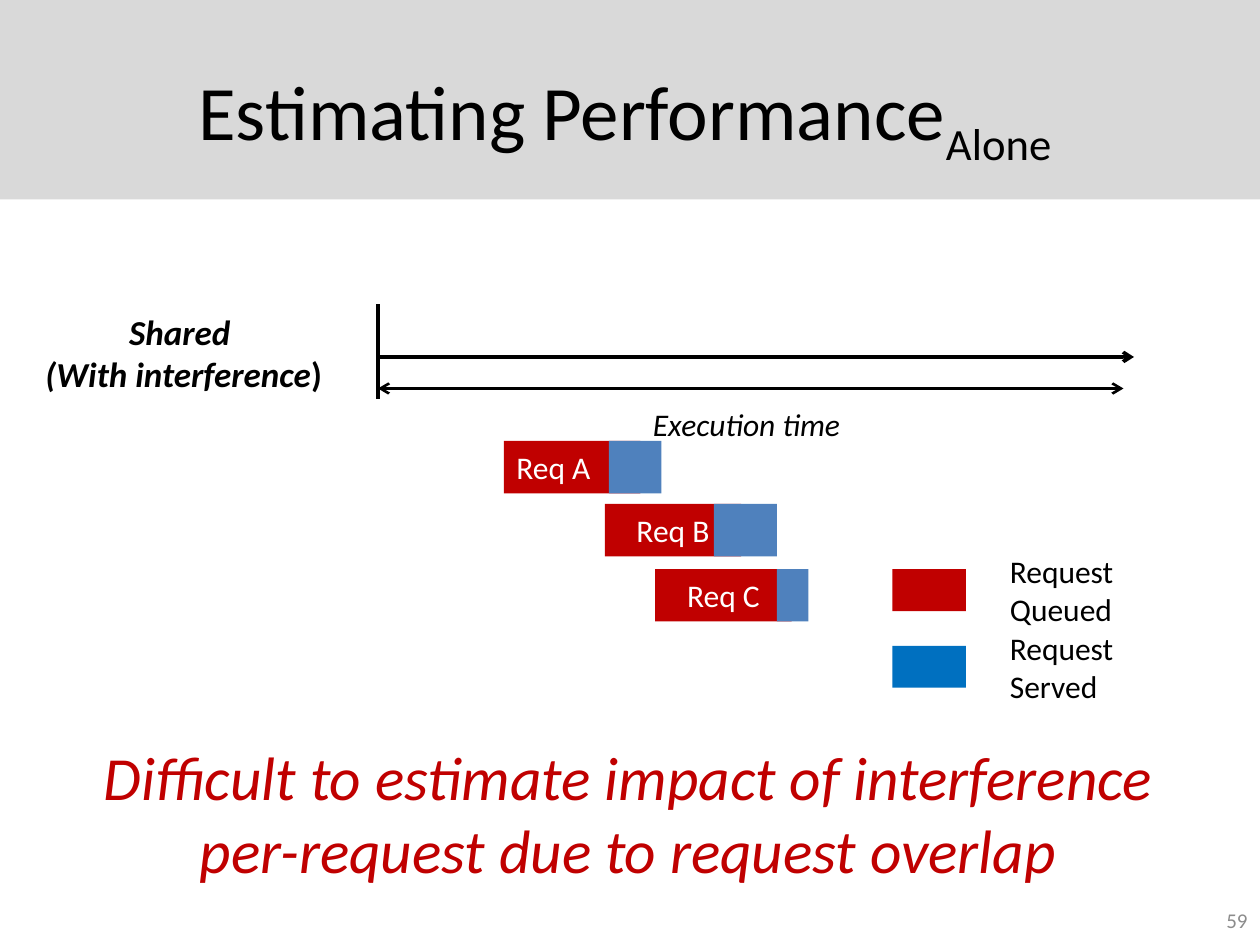
from dataclasses import dataclass

from lxml import etree
from pptx import Presentation
from pptx import util as u
from pptx.dml.color import RGBColor
from pptx.enum import shapes, text
from pptx.oxml import ns

PX = u.Inches(1) // 120
FONT = "Calibri"
COLORS = {
    "banner": "D9D9D9",
    "black": "000000",
    "white": "FFFFFF",
    "number": "8C8C8C",
    "queued": "C00000",
    "served": "4F81BD",
    "served_key": "0070C0",
}
LEFT, CENTER, RIGHT = text.PP_ALIGN.LEFT, text.PP_ALIGN.CENTER, text.PP_ALIGN.RIGHT
TOP, MIDDLE = text.MSO_ANCHOR.TOP, text.MSO_ANCHOR.MIDDLE


@dataclass(frozen=True)
class Box:
    x: int
    y: int
    w: int
    h: int

    def emu(self) -> list[int]:
        return [v * PX for v in (self.x, self.y, self.w, self.h)]


@dataclass(frozen=True)
class Style:
    size: int
    color: str = "black"
    align: int = LEFT
    anchor: int = TOP
    bold: bool = False
    italic: bool = False


@dataclass(frozen=True)
class Request:
    label: str
    queued: Box
    served: Box
    align: int = CENTER


@dataclass(frozen=True)
class Key:
    label: str
    color: str
    y: int


@dataclass(frozen=True)
class Line:
    x1: int
    y1: int
    x2: int
    y2: int
    width: float
    ends: tuple[str, ...] = ()


REQUESTS = [
    Request("Req A", Box(480, 420, 130, 50), Box(580, 420, 50, 50), LEFT),
    Request("Req B", Box(576, 480, 130, 50), Box(680, 480, 60, 50)),
    Request("Req C", Box(624, 542, 130, 50), Box(740, 542, 30, 50)),
]
KEYS = [
    Key("Request Queued", "queued", 542),
    Key("Request Served", "served_key", 615),
]
LINES = [
    Line(360, 290, 360, 380, 2),
    Line(360, 340, 1080, 340, 2, ("tailEnd",)),
    Line(360, 370, 1070, 370, 1.5, ("headEnd", "tailEnd")),
]


def rgb(name: str) -> RGBColor:
    return RGBColor.from_string(COLORS[name])


def format_text(tf, style: Style) -> None:
    tf.word_wrap = True
    tf.vertical_anchor = style.anchor
    for p in tf.paragraphs:
        p.alignment = style.align
        for r in p.runs:
            r.font.name = FONT
            r.font.size = u.Pt(style.size)
            r.font.bold = style.bold
            r.font.italic = style.italic
            r.font.color.rgb = rgb(style.color)


def add_rect(s, box: Box, color: str):
    sp = s.shapes.add_shape(shapes.MSO_SHAPE.RECTANGLE, *box.emu())
    sp.shadow.inherit = False
    sp.fill.solid()
    sp.fill.fore_color.rgb = rgb(color)
    sp.line.fill.background()
    return sp


def add_label(s, box: Box, words: str, style: Style):
    sp = s.shapes.add_textbox(*box.emu())
    sp.text_frame.text = words
    format_text(sp.text_frame, style)
    return sp


def add_line(s, line: Line) -> None:
    ends = [v * PX for v in (line.x1, line.y1, line.x2, line.y2)]
    c = s.shapes.add_connector(shapes.MSO_CONNECTOR.STRAIGHT, *ends)
    c.line.color.rgb = rgb("black")
    c.line.width = u.Pt(line.width)
    ln = c.line._get_or_add_ln()
    for end in line.ends:
        etree.SubElement(ln, ns.qn(f"a:{end}"), type="arrow")
    etree.SubElement(c._element.spPr, ns.qn("a:effectLst"))


def add_request(s, request: Request) -> None:
    sp = add_rect(s, request.queued, "queued")
    sp.text_frame.text = request.label
    format_text(sp.text_frame, Style(18, "white", request.align, MIDDLE))
    add_rect(s, request.served, "served")


def add_key(s, key: Key) -> None:
    add_rect(s, Box(850, key.y, 70, 40), key.color)
    add_label(s, Box(950, key.y - 22, 210, 85), key.label, Style(18))


def add_title(s) -> None:
    banner = add_rect(s, Box(0, 0, 1200, 190), "banner")
    title = s.shapes.title
    title._element.addprevious(banner._element)
    title.left, title.top, title.width, title.height = Box(60, 36, 1080, 150).emu()
    tf = title.text_frame
    tf.text = "Estimating Performance"
    r = tf.paragraphs[0].add_run()
    r.text = "Alone "
    format_text(tf, Style(44, align=CENTER, anchor=MIDDLE))
    r.font._element.set("baseline", "-25000")


def main() -> None:
    prs = Presentation()
    prs.slide_width, prs.slide_height = 1200 * PX, 900 * PX
    s = prs.slides.add_slide(prs.slide_layouts[5])

    add_title(s)
    add_label(s, Box(920, 852, 280, 48), "59", Style(12, "number", RIGHT, MIDDLE))
    shared = add_label(s, Box(20, 290, 310, 92), "Shared \n(With interference",
                       Style(20, align=CENTER, bold=True, italic=True))
    r = shared.text_frame.paragraphs[1].add_run()
    r.text = ")"
    r.font.name, r.font.size, r.font.bold = FONT, u.Pt(20), True
    r.font.color.rgb = rgb("black")

    for line in LINES:
        add_line(s, line)
    add_label(s, Box(610, 380, 230, 48), "Execution time", Style(18, italic=True))
    for request in REQUESTS:
        add_request(s, request)
    for key in KEYS:
        add_key(s, key)

    conclusion = add_rect(s, Box(46, 678, 1105, 192), "white")
    conclusion.text_frame.text = (
        "Difficult to estimate impact of interference "
        "per-request due to request overlap"
    )
    format_text(conclusion.text_frame, Style(35, "queued", CENTER, MIDDLE, italic=True))

    prs.save("out.pptx")


if __name__ == "__main__":
    main()
